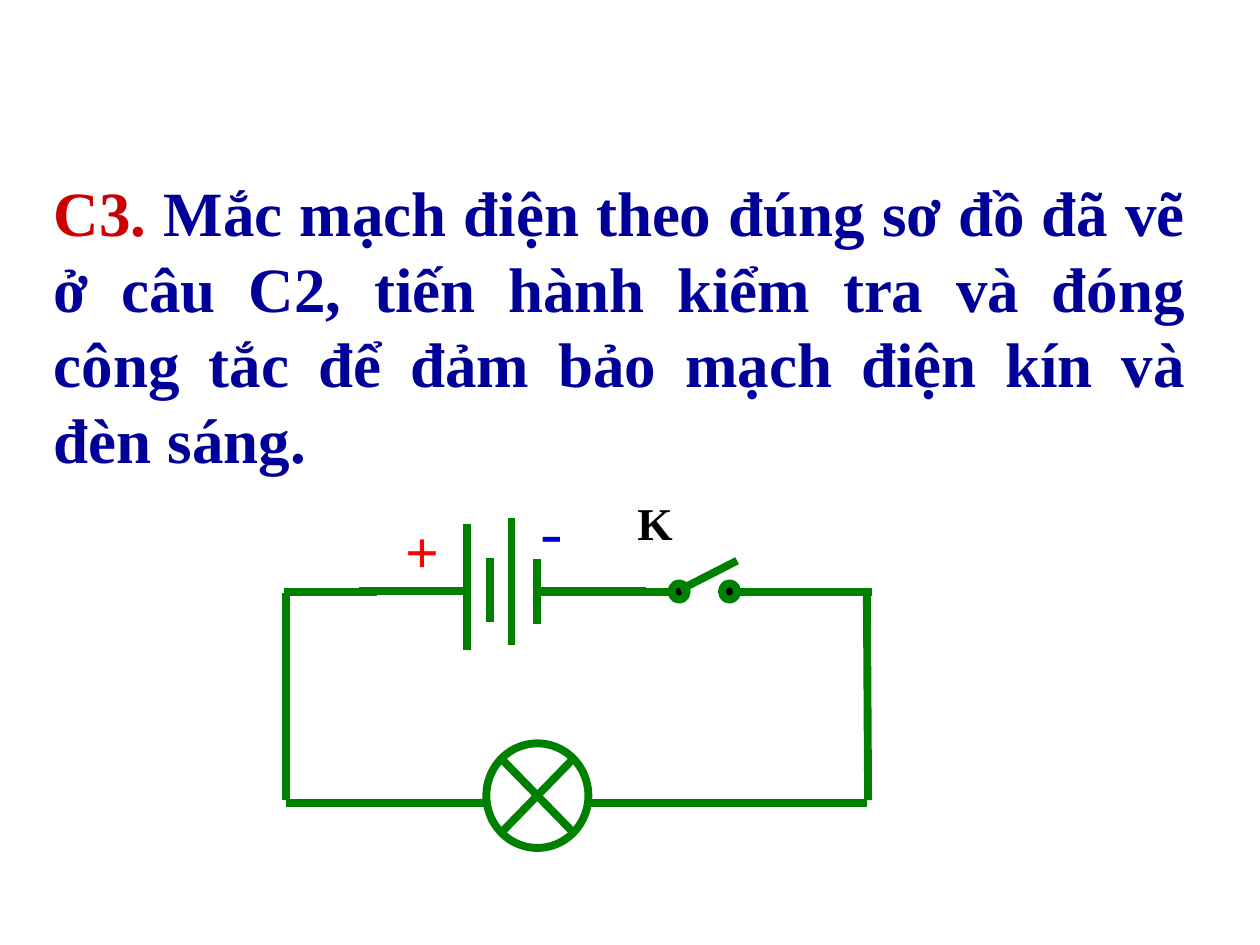
from dataclasses import dataclass
from typing import NamedTuple

from lxml import etree
from pptx import Presentation
from pptx import util as u
from pptx.dml.color import RGBColor
from pptx.enum import shapes, text
from pptx.oxml import ns


@dataclass(frozen=True)
class Theme:
    font: str = "Times New Roman"
    wire: str = "008000"
    contact: str = "000000"
    label: str = "CC0000"
    body: str = "000099"
    plus: str = "FF0000"
    minus: str = "0000CC"
    switch: str = "000000"
    body_size: int = 36
    plus_size: int = 34
    minus_size: int = 38
    switch_size: int = 26
    wire_width: float = 4.5


class Wire(NamedTuple):
    x1: float
    y1: float
    x2: float
    y2: float


class Box(NamedTuple):
    left: float
    top: float
    width: float
    height: float


class Run(NamedTuple):
    words: str
    size: int
    color: str
    bold: bool = True


@dataclass(frozen=True)
class Label:
    box: Box
    runs: tuple[Run, ...]
    wrap: bool = True
    align: text.PP_ALIGN = text.PP_ALIGN.LEFT


THEME = Theme()

QUESTION = Label(
    Box(0.33, 1.33, 9.18, 2.52),
    (
        Run("C3. ", THEME.body_size, THEME.label),
        Run(
            "Mắc mạch điện theo đúng sơ đồ đã vẽ ở câu C2, tiến hành kiểm tra "
            "và đóng công tắc để đảm bảo mạch điện kín và đèn sáng.",
            THEME.body_size,
            THEME.body,
        ),
    ),
    align=text.PP_ALIGN.JUSTIFY,
)

BATTERY_PLATES = (
    Wire(3.71, 4.16, 3.71, 5.16),
    Wire(3.89, 4.43, 3.89, 4.94),
    Wire(4.06, 4.11, 4.06, 5.12),
    Wire(4.26, 4.44, 4.26, 4.95),
)
CIRCUIT_WIRES = (
    Wire(2.25, 4.7, 2.99, 4.7),
    Wire(2.85, 4.69, 3.7, 4.69),
    Wire(4.27, 4.69, 5.13, 4.69),
    Wire(4.23, 4.7, 5.33, 4.7),
    Wire(5.82, 4.7, 6.92, 4.7),
    Wire(6.88, 4.71, 6.89, 6.35),
    Wire(4.67, 6.37, 6.88, 6.37),
    Wire(2.27, 6.37, 3.86, 6.37),
    Wire(2.27, 4.71, 2.27, 6.35),
)
SWITCH_ARM = Wire(5.4, 4.68, 5.85, 4.45)
SWITCH_CONTACTS = tuple(Box(x, 4.63, 0.12, 0.13) for x in (5.33, 5.73))
LAMP = Box(3.86, 5.9, 0.81, 0.83)

CIRCUIT_LABELS = (
    Label(Box(3.12, 4.03, 0.59, 0.67), (Run("+", THEME.plus_size, THEME.plus),)),
    Label(
        Box(4.19, 3.83, 0.38, 0.74),
        (Run("-", THEME.minus_size, THEME.minus, False),),
        wrap=False,
    ),
    Label(
        Box(4.96, 3.88, 0.49, 0.54),
        (Run("K", THEME.switch_size, THEME.switch),),
        wrap=False,
    ),
)


def set_line(sp) -> None:
    sp.line.color.rgb = RGBColor.from_string(THEME.wire)
    sp.line.width = u.Pt(THEME.wire_width)


def draw_wire(parent, wire: Wire) -> None:
    sp = parent.add_connector(
        shapes.MSO_CONNECTOR.STRAIGHT, *(u.Inches(v) for v in wire)
    )
    set_line(sp)
    etree.SubElement(sp._element.spPr, ns.qn("a:effectLst"))


def draw_symbol(
    parent, kind: shapes.MSO_SHAPE, box: Box, fill: str | None = None
) -> None:
    sp = parent.add_shape(kind, *(u.Inches(v) for v in box))
    sp.shadow.inherit = False
    if fill:
        sp.fill.solid()
        sp.fill.fore_color.rgb = RGBColor.from_string(fill)
    else:
        sp.fill.background()
    set_line(sp)


def draw_label(parent, label: Label) -> None:
    tf = parent.add_textbox(*(u.Inches(v) for v in label.box)).text_frame
    frame_format = {
        "word_wrap": label.wrap,
        "auto_size": text.MSO_AUTO_SIZE.SHAPE_TO_FIT_TEXT,
    }
    for name, value in frame_format.items():
        setattr(tf, name, value)
    p = tf.paragraphs[0]
    p.alignment = label.align
    for run in label.runs:
        r = p.add_run()
        r.text = run.words
        font_format = {
            "name": THEME.font,
            "size": u.Pt(run.size),
            "bold": run.bold,
        }
        for name, value in font_format.items():
            setattr(r.font, name, value)
        r.font.color.rgb = RGBColor.from_string(run.color)


def main() -> None:
    prs = Presentation()
    prs.slide_width, prs.slide_height = u.Inches(10), u.Inches(7.5)
    s = prs.slides.add_slide(prs.slide_layouts[6])
    draw_label(s.shapes, QUESTION)

    circuit = s.shapes.add_group_shape().shapes
    for wire in BATTERY_PLATES + CIRCUIT_WIRES:
        draw_wire(circuit, wire)
    for contact in SWITCH_CONTACTS:
        draw_symbol(circuit, shapes.MSO_SHAPE.OVAL, contact, THEME.contact)
    draw_wire(circuit, SWITCH_ARM)
    draw_symbol(circuit, shapes.MSO_SHAPE.FLOWCHART_SUMMING_JUNCTION, LAMP)
    for label in CIRCUIT_LABELS:
        draw_label(circuit, label)

    prs.save("out.pptx")


if __name__ == "__main__":
    main()
